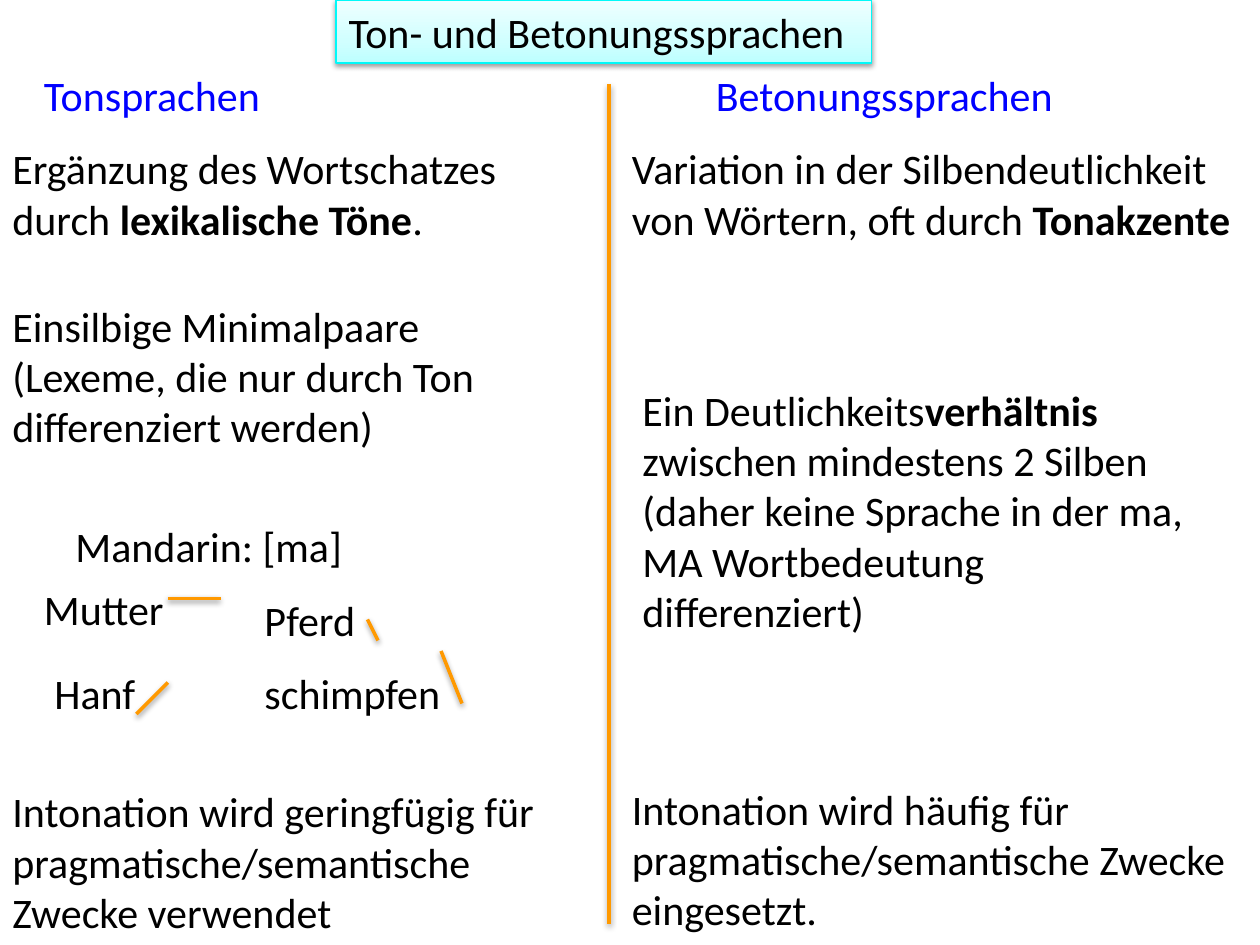
"""Build a slide that contrasts tone languages with stress languages."""
from dataclasses import dataclass

from lxml import etree
from pptx import Presentation
from pptx.dml.color import RGBColor
from pptx.enum.shapes import MSO_CONNECTOR
from pptx.enum.text import MSO_ANCHOR, MSO_AUTO_SIZE, PP_ALIGN
from pptx.util import Inches, Pt

STRAIGHT = MSO_CONNECTOR.STRAIGHT
TOP = MSO_ANCHOR.TOP
FIXED = MSO_AUTO_SIZE.NONE
GROW = MSO_AUTO_SIZE.SHAPE_TO_FIT_TEXT
LEFT = PP_ALIGN.LEFT
DRAWING = "http://schemas.openxmlformats.org/drawingml/2006/main"
TITLE_ONLY = 5
CELLS_PER_INCH = 12


@dataclass(frozen=True)
class Theme:
    font: str = "Calibri"
    size: float = 24
    text: str = "000000"
    heading: str = "0000FF"
    accent: str = "FF9900"
    accent_width: float = 2
    title_border: str = "00F9F9"
    title_border_width: float = 0.75
    title_stops: tuple = ((0, "BDFFFF"), (35, "D1FFFF"), (100, "EEFFFF"))


@dataclass(frozen=True)
class Run:
    text: str
    bold: bool = False


@dataclass(frozen=True)
class Label:
    column: float
    row: float
    columns: float
    lines: int
    runs: tuple
    color: str


@dataclass(frozen=True)
class Stroke:
    start: tuple
    end: tuple


THEME = Theme()


def body(column: float, row: float, columns: float, lines: int, *runs: Run) -> Label:
    return Label(column, row, columns, lines, runs, THEME.text)


def heading(column: float, columns: float, text: str) -> Label:
    return Label(column, 6, columns, 1, (Run(text),), THEME.heading)


TITLE = body(32, 0, 51, 1, Run("Ton- und Betonungssprachen"))
LABELS = (
    heading(3, 28, "Tonsprachen"),
    heading(67, 38, "Betonungssprachen"),
    body(59, 74, 61, 3, Run("Intonation wird häufig für pragmatische/semantische Zwecke eingesetzt.")),
    body(60, 36, 56, 5, Run("Ein Deutlichkeits"), Run("verhältnis", True),
         Run(" zwischen mindestens 2 Silben (daher keine Sprache in der ma, "
             "MA Wortbedeutung differenziert)")),
    body(59, 13, 61, 2, Run("Variation in der Silbendeutlichkeit von Wörtern, oft durch "),
         Run("Tonakzente", True)),
    body(0, 13, 56, 2, Run("Ergänzung des Wortschatzes durch "),
         Run("lexikalische Töne", True), Run(".")),
    body(0, 74.25, 55, 3,
         Run("Intonation wird geringfügig für pragmatische/semantische Zwecke verwendet")),
    body(0, 28, 48, 3,
         Run("Einsilbige Minimalpaare (Lexeme, die nur durch Ton differenziert werden)")),
    body(3, 55, 16, 1, Run("Mutter")),
    body(4, 63, 13, 1, Run("Hanf")),
    body(24, 56, 16, 1, Run("Pferd")),
    body(24, 63, 21, 1, Run("schimpfen")),
    body(6, 49, 32, 1, Run("Mandarin: [ma]")),
)
STROKES = (
    Stroke((58, 8), (58, 88)),
    Stroke((16, 57), (21, 57)),
    Stroke((13, 68), (16, 65)),
    Stroke((35, 59), (36, 61)),
    Stroke((42, 62), (44, 67)),
)


def grid(cells: float) -> int:
    return Inches(cells / CELLS_PER_INCH)


def rgb(color: str) -> RGBColor:
    return RGBColor.from_string(color)


def append_xml(shape, xml: str) -> None:
    shape._element.spPr.append(etree.fromstring(xml))


def add_shadow(shape) -> None:
    append_xml(shape, f'<a:effectLst xmlns:a="{DRAWING}">'
               '<a:outerShdw blurRad="40000" dist="20000" dir="5400000" rotWithShape="0">'
               '<a:srgbClr val="000000"><a:alpha val="38000"/></a:srgbClr>'
               '</a:outerShdw></a:effectLst>')


def set_line(shape, color: str, width: float) -> None:
    shape.line.color.rgb = rgb(color)
    shape.line.width = Pt(width)


def write_label(shape, label: Label, auto_size: MSO_AUTO_SIZE = GROW) -> None:
    shape.left, shape.top = grid(label.column), grid(label.row)
    shape.width = grid(label.columns)
    shape.height = Inches(0.1 + 0.4 * label.lines)
    frame = shape.text_frame
    frame.word_wrap = True
    frame.auto_size = auto_size
    frame.vertical_anchor = TOP
    paragraph = frame.paragraphs[0]
    paragraph.alignment = LEFT
    for part in label.runs:
        run = paragraph.add_run()
        run.text = part.text
        run.font.name = THEME.font
        run.font.size = Pt(THEME.size)
        run.font.bold = part.bold
        run.font.color.rgb = rgb(label.color)


def style_title(title) -> None:
    stops = "".join(f'<a:gs pos="{position * 1000}"><a:srgbClr val="{color}"/></a:gs>'
                    for position, color in THEME.title_stops)
    append_xml(title, f'<a:gradFill xmlns:a="{DRAWING}"><a:gsLst>{stops}</a:gsLst>'
               '<a:lin ang="16200000" scaled="0"/></a:gradFill>')
    set_line(title, THEME.title_border, THEME.title_border_width)
    add_shadow(title)


def add_stroke(slide, stroke: Stroke) -> None:
    points = [grid(value) for value in stroke.start + stroke.end]
    connector = slide.shapes.add_connector(STRAIGHT, *points)
    set_line(connector, THEME.accent, THEME.accent_width)
    add_shadow(connector)


def main() -> None:
    presentation = Presentation()
    presentation.slide_width, presentation.slide_height = Inches(10), Inches(7.5)
    slide = presentation.slides.add_slide(presentation.slide_layouts[TITLE_ONLY])
    write_label(slide.shapes.title, TITLE, FIXED)
    style_title(slide.shapes.title)
    for label in LABELS:
        write_label(slide.shapes.add_textbox(0, 0, 0, 0), label)
    for stroke in STROKES:
        add_stroke(slide, stroke)
    presentation.save("out.pptx")


if __name__ == "__main__":
    main()
